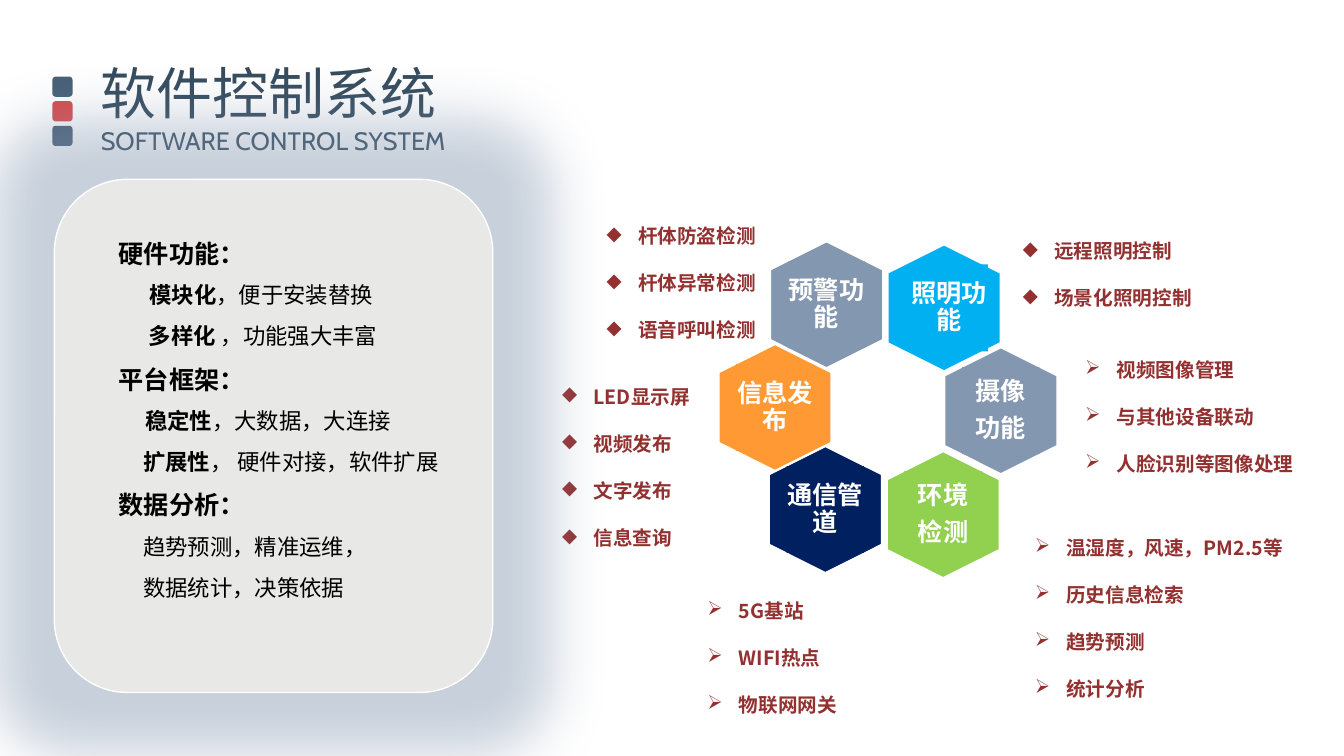
from lxml import etree
from pptx import Presentation
from pptx.dml.color import RGBColor
from pptx.enum.shapes import MSO_SHAPE
from pptx.enum.text import MSO_ANCHOR, PP_ALIGN
from pptx.oxml.ns import qn
from pptx.util import Cm, Pt

HEXAGON = MSO_SHAPE.HEXAGON
RECTANGLE = MSO_SHAPE.RECTANGLE
ROUNDED = MSO_SHAPE.ROUNDED_RECTANGLE
CENTER = PP_ALIGN.CENTER
MIDDLE = MSO_ANCHOR.MIDDLE

COLORS = {
    "title": "354B5E", "marker": "475F77", "accent": "D74B4B",
    "card": "E8E8E6", "glow": "8497B0", "white": "FFFFFF", "black": "000000",
    "list": "933030", "blue": "00B0F0", "slate": "8497B0",
    "orange": "FF9933", "navy": "002060", "green": "92D050",
}
TITLE_FONT = "Cabin"
BODY_FONT = "Noto Sans CJK SC"
DIAMOND, ARROW = "◆", "➢"

# Centre x, centre y, colour, label lines, label shift to the right
HEXAGONS = [
    (23.79, 7.76, "blue", ["照明功能"], 0.13),
    (20.83, 7.68, "slate", ["预警功能"], 0),
    (19.53, 10.27, "orange", ["信息发布"], 0),
    (25.22, 10.35, "slate", ["摄像", "功能"], 0),
    (20.80, 12.84, "navy", ["通信管道"], 0),
    (23.77, 12.97, "green", ["环境", "检测"], 0),
]
# Left, top, width, bullet, items
FEATURE_LISTS = [
    (15.04, 4.93, 4.52, DIAMOND, ["杆体防盗检测", "杆体异常检测", "语音呼叫检测"]),
    (25.53, 5.31, 7.11, DIAMOND, ["远程照明控制", "场景化照明控制"]),
    (13.92, 8.97, 4.09, DIAMOND, ["LED显示屏", "视频发布", "文字发布", "信息查询"]),
    (27.1, 8.31, 5.84, ARROW, ["视频图像管理", "与其他设备联动", "人脸识别等图像处理"]),
    (17.58, 14.38, 3.96, ARROW, ["5G基站", "WIFI热点", "物联网网关"]),
    (25.83, 12.78, 7.11, ARROW,
     ["温湿度，风速，PM2.5等", "历史信息检索", "趋势预测", "统计分析"]),
]
# Heading, then lines of indent, bold lead, plain rest
CARD_SECTIONS = [
    ("硬件功能：", [(0.78, "模块化", "，便于安装替换"),
               (0.76, "多样化", " ，功能强大丰富")]),
    ("平台框架：", [(0.67, "稳定性", "，大数据，大连接"),
               (0.62, "扩展性", "， 硬件对接，软件扩展")]),
    ("数据分析：", [(0.62, "", "趋势预测，精准运维，"),
               (0.62, "", "数据统计，决策依据")]),
]


def color(name):
    return RGBColor.from_string(COLORS[name])


def add_block(slide, kind, box, fill, line=None, line_width=1):
    shape = slide.shapes.add_shape(kind, *map(Cm, box))
    shape.shadow.inherit = False
    shape.fill.solid()
    shape.fill.fore_color.rgb = color(fill)
    if line:
        shape.line.color.rgb = color(line)
        shape.line.width = Pt(line_width)
    else:
        shape.line.fill.background()
    return shape


def add_text_box(slide, box, wrap=True):
    frame = slide.shapes.add_textbox(*map(Cm, box)).text_frame
    frame.word_wrap = wrap
    return frame


def next_paragraph(frame):
    """Return the first paragraph while it is empty, else a new one."""
    first = frame.paragraphs[0]
    return frame.add_paragraph() if first.runs else first


def set_font(paragraph, name, size, color_name, bold=False):
    font = paragraph.font
    font.size, font.bold = Pt(size), bold
    font.color.rgb = color(color_name)
    font.name = name
    properties = paragraph._p.pPr.find(qn("a:defRPr"))
    etree.SubElement(properties, qn("a:ea"), typeface=name)


def set_bullet(paragraph, character, indent):
    properties = paragraph._p.get_or_add_pPr()
    properties.set("marL", str(Cm(indent)))
    properties.set("indent", str(-Cm(indent)))
    etree.SubElement(properties, qn("a:buChar"), char=character)


def add_glow(shape, radius, color_name, opacity):
    effects = shape._element.spPr.find(qn("a:effectLst"))
    glow = etree.SubElement(effects, qn("a:glow"), rad=str(Cm(radius)))
    tint = etree.SubElement(glow, qn("a:srgbClr"), val=COLORS[color_name])
    etree.SubElement(tint, qn("a:alpha"), val=str(opacity * 1000))


def add_header(slide, left, top):
    for row, fill in enumerate(["marker", "accent", "marker"]):
        add_block(slide, ROUNDED, (left, top + row * 0.62, 0.51, 0.51), fill)
    frame = add_text_box(slide, (left + 0.97, top - 0.58, 9.25, 2.74), wrap=False)
    for text, size in [("软件控制系统", 40), ("SOFTWARE CONTROL SYSTEM", 18)]:
        paragraph = next_paragraph(frame)
        paragraph.add_run().text = text
        set_font(paragraph, TITLE_FONT, size, "title")


def add_hexagon(slide, center_x, center_y, fill, lines, shift):
    width, height = 3.2, 2.85
    hexagon = add_block(
        slide, HEXAGON,
        (center_x - width / 2, center_y - height / 2, width, height),
        fill, "white", 1.5)
    hexagon.rotation = 90
    hexagon.adjustments[0] = 0.25

    width, height = 1.95, 2.19
    label = add_block(
        slide, RECTANGLE,
        (center_x - width / 2 + shift, center_y - height / 2, width, height), fill)
    frame = label.text_frame
    frame.word_wrap = True
    frame.vertical_anchor = MIDDLE
    frame.margin_left = frame.margin_right = 0
    frame.margin_top = frame.margin_bottom = 0
    for line in lines:
        paragraph = next_paragraph(frame)
        paragraph.add_run().text = line
        paragraph.alignment = CENTER
        paragraph.line_spacing = 0.9
        paragraph.space_after = Pt(7)
        set_font(paragraph, BODY_FONT, 18, "white", bold=True)


def add_feature_list(slide, left, top, width, bullet, items):
    frame = add_text_box(slide, (left, top, width, 0.24 + 1.2 * len(items)))
    for item in items:
        paragraph = next_paragraph(frame)
        paragraph.add_run().text = item
        set_bullet(paragraph, bullet, 0.79)
        paragraph.line_spacing = 2.0
        set_font(paragraph, BODY_FONT, 14, "list", bold=True)


def add_card(slide, left, top, width, height):
    card = add_block(slide, ROUNDED, (left, top, width, height), "card", "white")
    add_glow(card, 3, "glow", 45)
    frame = add_text_box(slide, (left + 1.37, top + 0.97, 9.04, 11.02))
    for heading, lines in CARD_SECTIONS:
        paragraph = next_paragraph(frame)
        paragraph.add_run().text = heading
        paragraph.line_spacing = 1.5
        set_font(paragraph, BODY_FONT, 18, "black", bold=True)
        for indent, lead, rest in lines:
            paragraph = next_paragraph(frame)
            paragraph._p.get_or_add_pPr().set("marL", str(Cm(indent)))
            if lead:
                run = paragraph.add_run()
                run.text = lead
                run.font.bold = True
            paragraph.add_run().text = rest
            paragraph.line_spacing = 1.5
            set_font(paragraph, BODY_FONT, 16, "black")


def main():
    presentation = Presentation()
    presentation.slide_width, presentation.slide_height = Cm(33.87), Cm(19.05)
    slide = presentation.slides.add_slide(presentation.slide_layouts[6])
    add_header(slide, 1.32, 1.93)
    for hexagon in HEXAGONS:
        add_hexagon(slide, *hexagon)
    for feature_list in FEATURE_LISTS:
        add_feature_list(slide, *feature_list)
    add_card(slide, 1.37, 4.52, 11.05, 12.93)
    presentation.save("out.pptx")


if __name__ == "__main__":
    main()
